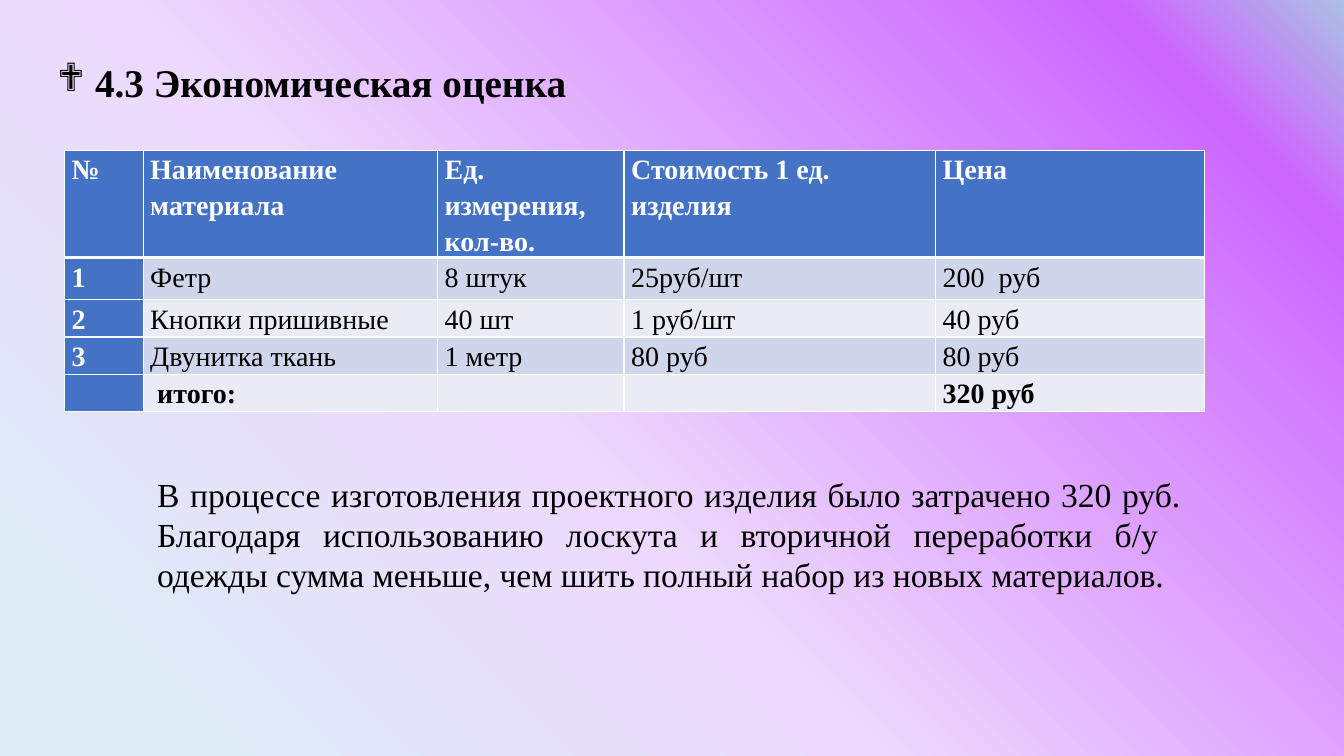
import pptx
import pptx.dml.color
import pptx.enum.text
import pptx.oxml
import pptx.oxml.ns
import pptx.util

ALIGN = pptx.enum.text.PP_ALIGN
ANCHOR = pptx.enum.text.MSO_ANCHOR
FONT = "Times New Roman"
BLACK, WHITE, BLUE = "000000", "FFFFFF", "4472C4"
BANDS = ("CFD5EA", "E9EBF5")
GRADIENT_STOPS = ((9, "DEEBF7"), (42, "EDD9FD"), (89, "CC66FF"), (100, "ABC0E4"), (100, "C7D5ED"))
COLUMN_WIDTHS = (0.78, 2.92, 1.85, 3.09, 2.67)
ROW_HEIGHTS = (1.06, 0.42, 0.37, 0.37, 0.37)
COSTS = (
    ("№", "Наименование материала", "Ед. измерения, кол-во.", "Стоимость 1 ед. изделия", "Цена"),
    ("1", "Фетр", "8 штук", "25руб/шт", "200  руб"),
    ("2", "Кнопки пришивные", "40 шт", "1 руб/шт", "40 руб"),
    ("3", "Двунитка ткань", "1 метр", "80 руб", "80 руб"),
    ("", " итого:", "", "", "320 руб"),
)
SUMMARY = (
    "В процессе изготовления проектного изделия было затрачено 320 руб. "
    "Благодаря использованию лоскута и вторичной переработки б/у  одежды "
    "сумма меньше, чем шить полный набор из новых материалов."
)


def color(value):
    """Turn a hex string into a colour."""
    return pptx.dml.color.RGBColor.from_string(value)


def drawing_element(tag, attributes="", content=""):
    """Build an element of the drawing namespace."""
    namespace = pptx.oxml.ns.nsdecls("a")
    return pptx.oxml.parse_xml(f"<a:{tag} {namespace} {attributes}>{content}</a:{tag}>")


def set_values(target, values):
    """Set every attribute of a target from a dict."""
    for name, value in values.items():
        setattr(target, name, value)


def write_text(paragraph, text, size, text_color, bold, **layout):
    """Write one formatted run into a paragraph."""
    set_values(paragraph, layout)
    run = paragraph.add_run()
    run.text = text
    set_values(run.font, {"name": FONT, "size": pptx.util.Pt(size), "bold": bold})
    run.font.color.rgb = color(text_color)


def paint_background(slide):
    """Spread a gradient from the bottom left corner."""
    slide.background.fill.gradient()
    gradient = slide.element.find(".//" + pptx.oxml.ns.qn("a:gradFill"))
    for child in list(gradient):
        gradient.remove(child)
    stops = "".join(
        f'<a:gs pos="{share * 1000}"><a:srgbClr val="{value}"/></a:gs>'
        for share, value in GRADIENT_STOPS
    )
    gradient.append(drawing_element("gsLst", content=stops))
    target = '<a:fillToRect t="100000" r="100000"/>'
    gradient.append(drawing_element("path", 'path="circle"', target))


def place_title(slide, box):
    """Place the bulleted heading."""
    title = slide.shapes.title
    set_values(title, dict(zip(("left", "top", "width", "height"), map(pptx.util.Inches, box))))
    frame = title.text_frame
    set_values(frame, {"word_wrap": True, "vertical_anchor": ANCHOR.TOP,
                       "auto_size": pptx.enum.text.MSO_AUTO_SIZE.NONE})
    paragraph = frame.paragraphs[0]
    properties = paragraph._p.get_or_add_pPr()
    indent = pptx.util.Inches(0.25)
    properties.set("marL", str(indent))
    properties.set("indent", str(-indent))
    properties.append(drawing_element("buFont", 'typeface="Wingdings"'))
    properties.append(drawing_element("buChar", 'char="❖"'))
    write_text(paragraph, " 4.3 Экономическая оценка", 28, BLACK, True,
               alignment=ALIGN.LEFT, line_spacing=0.9)


def draw_borders(cell, bottom_width):
    """Draw white borders around a cell."""
    properties = cell._tc.get_or_add_tcPr()
    line_fill = f'<a:solidFill><a:srgbClr val="{WHITE}"/></a:solidFill>'
    for side, width in (("L", 1), ("R", 1), ("T", 1), ("B", bottom_width)):
        line_width = f'w="{pptx.util.Pt(width)}"'
        properties.append(drawing_element(f"ln{side}", line_width, line_fill))


def place_costs(slide, box):
    """Place the cost table with a header row and a header column."""
    shape = slide.shapes.add_table(len(COSTS), len(COLUMN_WIDTHS), *map(pptx.util.Inches, box))
    table = shape.table
    for column, width in zip(table.columns, COLUMN_WIDTHS):
        column.width = pptx.util.Inches(width)
    for row, height in zip(table.rows, ROW_HEIGHTS):
        row.height = pptx.util.Inches(height)
    side_margin = pptx.util.Inches(0.07)
    last_row = len(COSTS) - 1
    for row_index, values in enumerate(COSTS):
        for column_index, text in enumerate(values):
            cell = table.cell(row_index, column_index)
            is_header = row_index == 0 or column_index == 0
            set_values(cell, {"margin_left": side_margin, "margin_right": side_margin,
                              "margin_top": 0, "margin_bottom": 0})
            draw_borders(cell, 3 if row_index == 0 else 1)
            cell.fill.solid()
            cell.fill.fore_color.rgb = color(BLUE if is_header else BANDS[(row_index - 1) % 2])
            if text:
                is_price_header = (row_index, column_index) == (0, 3)
                write_text(cell.text_frame.paragraphs[0], text, 20,
                           WHITE if is_header else BLACK,
                           is_header or row_index == last_row,
                           alignment=ALIGN.LEFT if is_price_header else ALIGN.JUSTIFY,
                           line_spacing=1.15)


def place_summary(slide, box):
    """Place the justified conclusion."""
    frame = slide.shapes.add_textbox(*map(pptx.util.Inches, box)).text_frame
    set_values(frame, {"word_wrap": True,
                       "auto_size": pptx.enum.text.MSO_AUTO_SIZE.SHAPE_TO_FIT_TEXT})
    write_text(frame.paragraphs[0], SUMMARY, 24, BLACK, False, alignment=ALIGN.JUSTIFY)


def main():
    """Build and save the slide."""
    presentation = pptx.Presentation()
    set_values(presentation, {"slide_width": pptx.util.Inches(13.33),
                              "slide_height": pptx.util.Inches(7.5)})
    slide = presentation.slides.add_slide(presentation.slide_layouts.get_by_name("Title Only"))
    paint_background(slide)
    place_title(slide, (0.47, 0.58, 12.03, 3.78))
    place_costs(slide, (0.64, 1.49, sum(COLUMN_WIDTHS), sum(ROW_HEIGHTS)))
    place_summary(slide, (1.46, 4.65, 10.35, 1.31))
    presentation.save("out.pptx")


if __name__ == "__main__":
    main()
